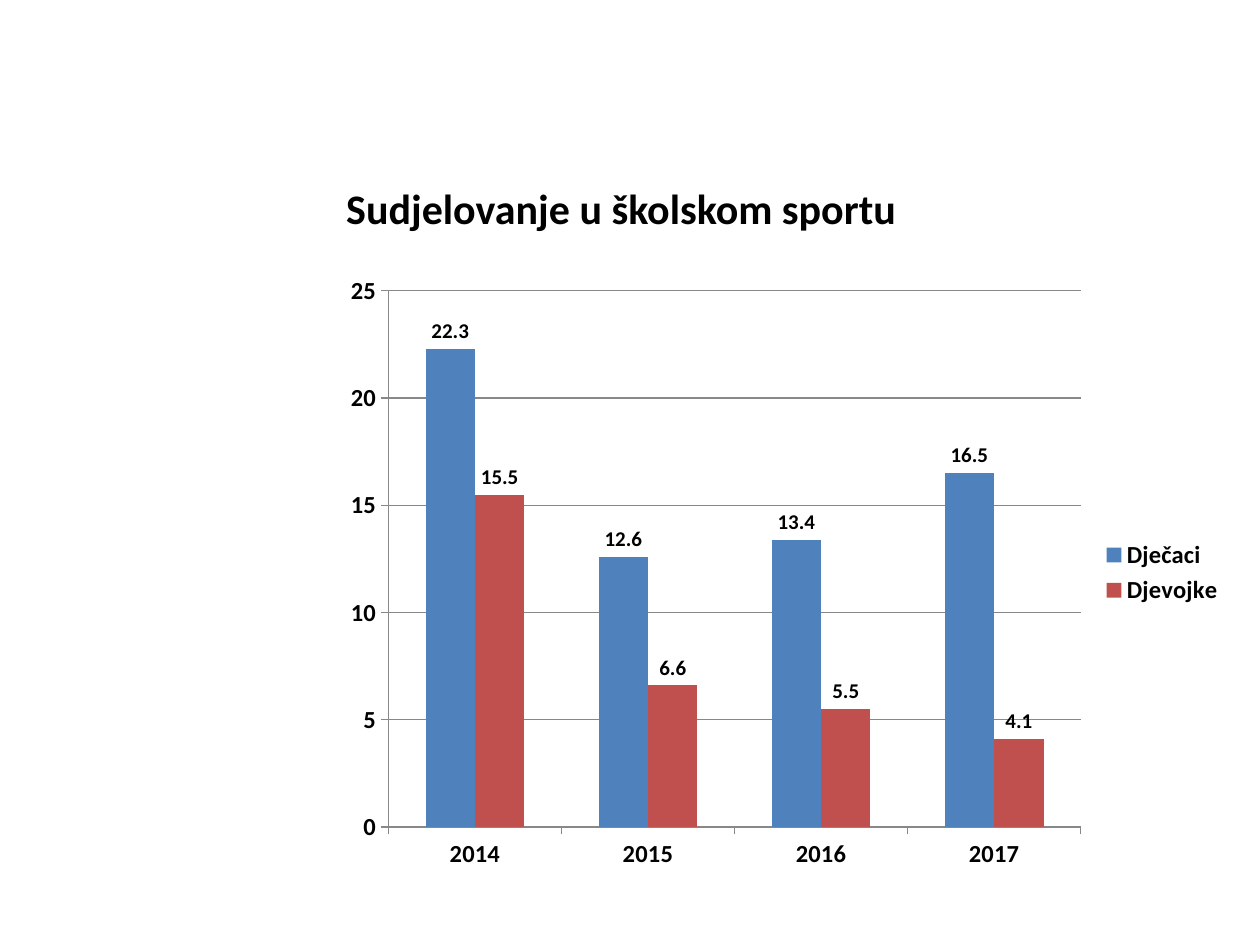
from pptx import Presentation
from pptx.chart.data import CategoryChartData as ChartData
from pptx.dml.color import RGBColor as RGB
from pptx.enum.chart import XL_CHART_TYPE as Kind, XL_LABEL_POSITION as Spot
from pptx.enum.chart import XL_LEGEND_POSITION as Side, XL_TICK_MARK as Tick
from pptx.enum.text import MSO_ANCHOR as Anchor, PP_ALIGN as Align
from pptx.util import Inches, Pt

FONT = "Calibri"
COLORS = {"text": "000000", "line": "888888", "boys": "4F81BD", "girls": "C0504D"}
YEARS = ["2014", "2015", "2016", "2017"]
SERIES = [
    ("Dječaci", "boys", [22.3, 12.6, 13.4, 16.5]),
    ("Djevojke", "girls", [15.5, 6.6, 5.5, 4.1]),
]


def color(name):
    return RGB.from_string(COLORS[name])


def set_font(font, size, bold=True):
    font.name = FONT
    font.size = Pt(size)
    font.bold = bold
    font.color.rgb = color("text")


def set_line(line):
    line.color.rgb = color("line")
    line.width = Pt(0.75)


def add_title(slide, text):
    title = slide.shapes.title
    title.left, title.top = Inches(0.72), Inches(1.4)
    title.width, title.height = Inches(8.42), Inches(0.5)
    frame = title.text_frame
    frame.text = text
    frame.word_wrap = True
    frame.vertical_anchor = Anchor.TOP
    para = frame.paragraphs[0]
    para.alignment = Align.CENTER
    set_font(para.font, 24)


def style_axis(axis):
    axis.major_tick_mark = Tick.OUTSIDE
    axis.minor_tick_mark = Tick.NONE
    set_font(axis.tick_labels.font, 14)
    set_line(axis.format.line)


def style_bars(plot):
    plot.gap_width = 150
    plot.overlap = 0
    plot.vary_by_categories = False
    for bars, (_, key, _) in zip(plot.series, SERIES):
        bars.format.fill.solid()
        bars.format.fill.fore_color.rgb = color(key)
        bars.invert_if_negative = False
        labels = bars.data_labels
        labels.show_value = True
        labels.position = Spot.OUTSIDE_END
        set_font(labels.font, 12)


def add_bars(slide):
    data = ChartData()
    data.categories = YEARS
    for name, _, values in SERIES:
        data.add_series(name, values)
    chart = slide.shapes.add_chart(
        Kind.COLUMN_CLUSTERED, Inches(2.64), Inches(2.09),
        Inches(7.17), Inches(4.91), data).chart
    chart.has_title = False
    set_font(chart.font, 10, False)
    style_bars(chart.plots[0])

    # Axes and grid
    for axis in (chart.category_axis, chart.value_axis):
        style_axis(axis)
    scale = chart.value_axis
    scale.minimum_scale, scale.maximum_scale, scale.major_unit = 0, 25, 5
    scale.has_major_gridlines = True
    set_line(scale.major_gridlines.format.line)

    # Legend
    chart.has_legend = True
    chart.legend.position = Side.RIGHT
    chart.legend.include_in_layout = False
    set_font(chart.legend.font, 14)


def main():
    deck = Presentation()
    deck.slide_width, deck.slide_height = Inches(10), Inches(7.5)
    slide = deck.slides.add_slide(deck.slide_layouts[5])
    add_title(slide, "Sudjelovanje u školskom sportu")
    add_bars(slide)
    deck.save("out.pptx")


if __name__ == "__main__":
    main()
